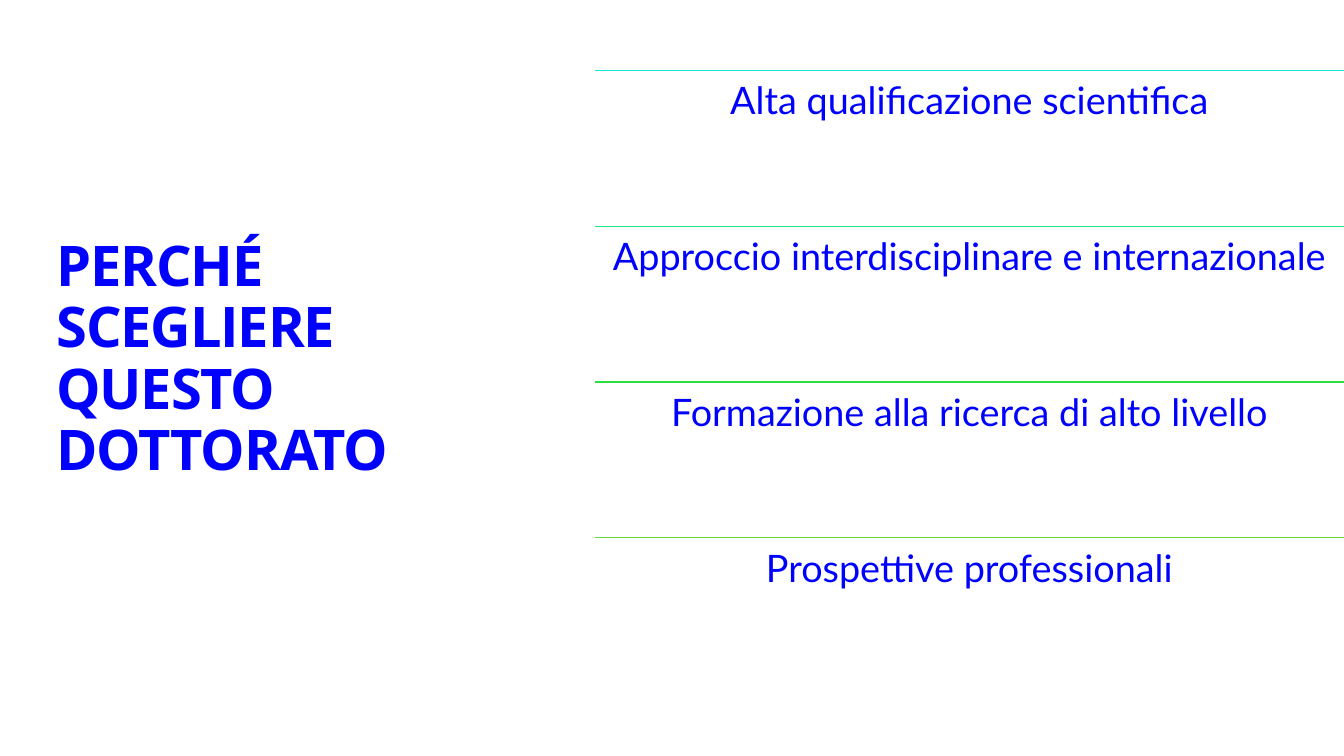
"""Build the slide on the reasons for choosing this doctorate."""
from lxml import etree
from pptx import Presentation
from pptx.dml.color import RGBColor
from pptx.enum import shapes, text
from pptx.oxml import ns
from pptx.util import Inches, Pt

BLUE = RGBColor(0x00, 0x00, 0xFF)
TITLE = "PERCHÉ SCEGLIERE QUESTO DOTTORATO"
REASONS = [
    ("Alta qualificazione scientifica", RGBColor(0x16, 0xE7, 0xCF)),
    ("Approccio interdisciplinare e internazionale", RGBColor(0x20, 0xE3, 0x82)),
    ("Formazione alla ricerca di alto livello", RGBColor(0x2B, 0xDD, 0x40)),
    ("Prospettive professionali", RGBColor(0x61, 0xD8, 0x36)),
]
SLIDE_WIDTH, SLIDE_HEIGHT = 26.67, 15
LIST_LEFT, LIST_TOP, ROW_HEIGHT = 11.8, 1.4, 3.09
LIST_WIDTH = SLIDE_WIDTH - LIST_LEFT


def add_text(slide, content, box, *, font, size, inset, line_spacing, bold=False,
             align=text.PP_ALIGN.LEFT, anchor=text.MSO_ANCHOR.TOP, tracking=0):
    """Add a wrapped text box at box (left, top, width, height in inches)."""
    frame = slide.shapes.add_textbox(*map(Inches, box)).text_frame
    frame.word_wrap = True
    frame.vertical_anchor = anchor
    frame.margin_left = frame.margin_right = Inches(inset)
    frame.margin_top = frame.margin_bottom = Inches(inset)
    paragraph = frame.paragraphs[0]
    paragraph.alignment = align
    paragraph.line_spacing = line_spacing
    run = paragraph.add_run()
    run.text = content
    run.font.name = font
    run.font.size = Pt(size)
    run.font.bold = bold
    run.font.color.rgb = BLUE
    if tracking:
        run.font._element.set("spc", str(round(tracking * 100)))


def add_rule(slide, top, color):
    """Add a horizontal rule across the list column."""
    rule = slide.shapes.add_connector(
        shapes.MSO_CONNECTOR.STRAIGHT,
        Inches(LIST_LEFT), Inches(top), Inches(SLIDE_WIDTH), Inches(top))
    rule.line.color.rgb = color
    rule.line.width = Pt(2)
    etree.SubElement(rule._element.spPr, ns.qn("a:effectLst"))


def main():
    """Create and save the presentation."""
    presentation = Presentation()
    presentation.slide_width = Inches(SLIDE_WIDTH)
    presentation.slide_height = Inches(SLIDE_HEIGHT)
    slide = presentation.slides.add_slide(presentation.slide_layouts[6])

    add_text(slide, TITLE, (1.06, 3.67, 9.12, 6.9), font="Open Sans", size=80,
             inset=0.06, line_spacing=Pt(88), bold=True,
             anchor=text.MSO_ANCHOR.MIDDLE, tracking=-1.7)
    for index, (reason, color) in enumerate(REASONS):
        top = LIST_TOP + index * ROW_HEIGHT
        add_rule(slide, top, color)
        add_text(slide, reason, (LIST_LEFT, top, LIST_WIDTH, ROW_HEIGHT),
                 font="Lato", size=54, inset=0.23, line_spacing=0.9,
                 align=text.PP_ALIGN.CENTER)

    presentation.save("out.pptx")


if __name__ == "__main__":
    main()
